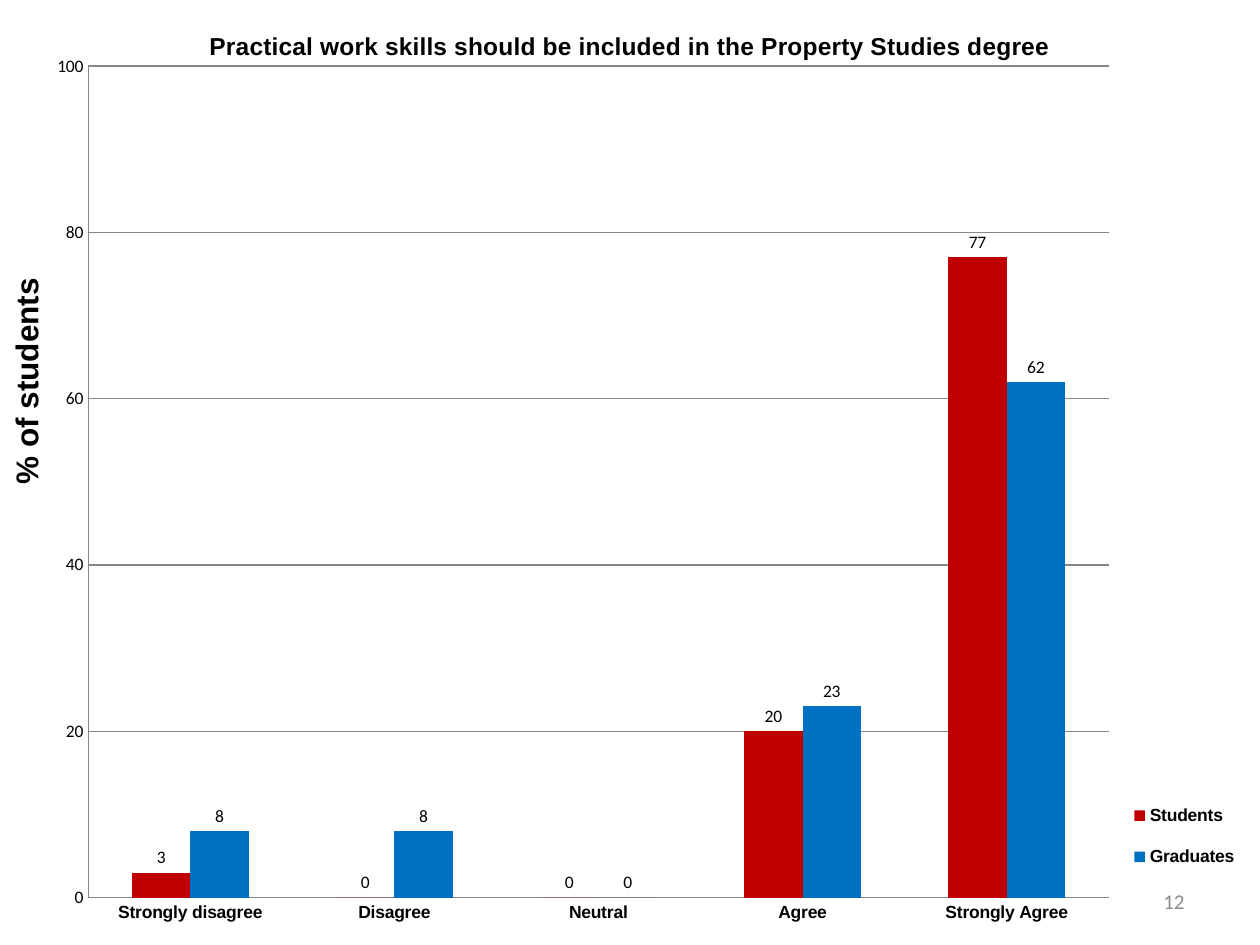
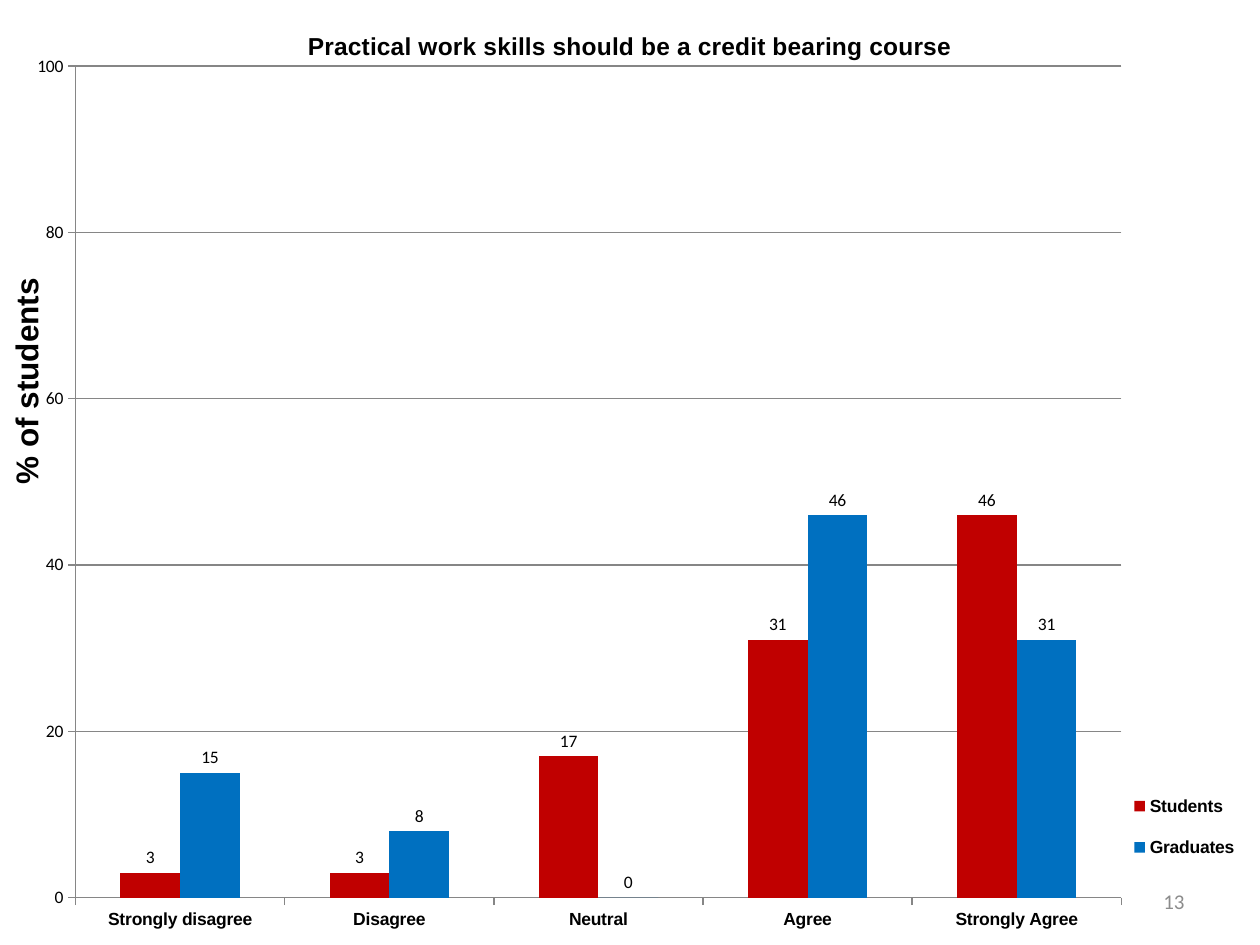
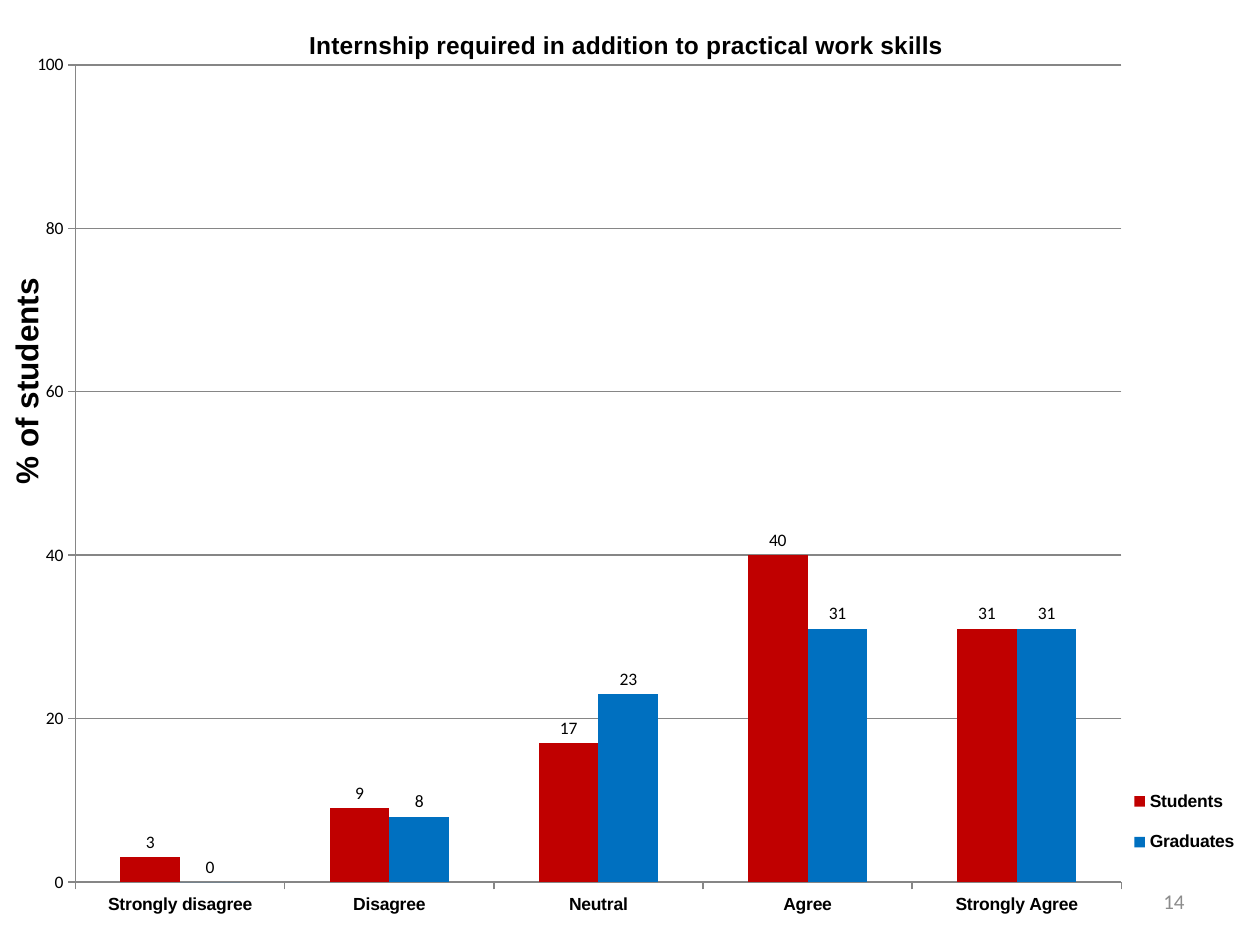
from lxml.etree import SubElement
from pptx import Presentation
from pptx.chart.data import CategoryChartData
from pptx.dml.color import RGBColor
from pptx.enum.chart import XL_CHART_TYPE, XL_LABEL_POSITION, XL_LEGEND_POSITION, XL_TICK_MARK
from pptx.enum.text import MSO_ANCHOR, MSO_AUTO_SIZE, PP_ALIGN
from pptx.oxml.ns import qn
from pptx.util import Pt

BLACK = RGBColor(0x00, 0x00, 0x00)
GREY = RGBColor(0x8C, 0x8C, 0x8C)
RULE = RGBColor(0x86, 0x86, 0x86)
RED = RGBColor(0xC0, 0x00, 0x00)
BLUE = RGBColor(0x00, 0x70, 0xC0)

BASE = {"name": "Calibri", "size": Pt(10), "bold": False}
STRONG = {"name": "Arial", "size": Pt(10), "bold": True}
HEAD = {"name": "Arial", "size": Pt(14), "bold": True}
SIDE = {"name": "Arial", "size": Pt(18), "bold": True}
FOOT = {"name": "Calibri", "size": Pt(12), "bold": False}

ANSWERS = ["Strongly disagree", "Disagree", "Neutral", "Agree", "Strongly Agree"]
GROUPS = [("Students", RED), ("Graduates", BLUE)]
WIDE = (0.06, 0.07, 0.83, 0.88)
SLIDES = [
    {"title": "Practical work skills should be included in the Property Studies degree",
     "values": [(3, 0, 0, 20, 77), (8, 8, 0, 23, 62)],
     "tick": XL_TICK_MARK.NONE, "height": 540,
     "plot": (0.07, 0.07, 0.81, 0.88), "key": (0.88, 0.83, 0.12, 0.11)},
    {"title": "Practical work skills should be a credit bearing course",
     "values": [(3, 3, 17, 31, 46), (15, 8, 0, 46, 31)],
     "tick": XL_TICK_MARK.OUTSIDE, "height": 540,
     "plot": WIDE, "key": (0.88, 0.82, 0.12, 0.11)},
    {"title": "Internship required in addition to practical work skills ",
     "values": [(3, 9, 17, 40, 31), (0, 8, 23, 31, 31)],
     "tick": XL_TICK_MARK.OUTSIDE, "height": 530.64,
     "plot": WIDE, "key": (0.88, 0.83, 0.12, 0.11)},
]
FIRST = 12


def style(font, look, color=BLACK):
    for name, value in look.items():
        setattr(font, name, value)
    font.color.rgb = color


def place(node, index, box, inner=False):
    """Fix a chart part at fractions (left, top, width, height) of the chart."""
    for old in node.findall(qn("c:layout")):
        node.remove(old)
    layout = SubElement(node, qn("c:layout"))
    node.insert(index, layout)
    manual = SubElement(layout, qn("c:manualLayout"))
    rules = [("layoutTarget", "inner")] if inner else []
    rules += [("xMode", "edge"), ("yMode", "edge"), *zip("xywh", box)]
    for tag, value in rules:
        SubElement(manual, qn(f"c:{tag}")).set("val", str(value))


prs = Presentation()
prs.slide_width, prs.slide_height = Pt(720), Pt(540)

for number, page in enumerate(SLIDES, FIRST):
    slide = prs.slides.add_slide(prs.slide_layouts[6])

    data = CategoryChartData()
    data.categories = ANSWERS
    for (group, _), values in zip(GROUPS, page["values"]):
        data.add_series(group, values)
    chart = slide.shapes.add_chart(
        XL_CHART_TYPE.COLUMN_CLUSTERED, 0, 0, Pt(720), Pt(page["height"]), data).chart
    style(chart.font, BASE)

    chart.has_title = True
    chart.chart_title.include_in_layout = False
    head = chart.chart_title.text_frame.paragraphs[0].add_run()
    head.text = page["title"]
    style(head.font, HEAD)

    chart.has_legend = True
    chart.legend.position = XL_LEGEND_POSITION.RIGHT
    chart.legend.include_in_layout = False
    style(chart.legend.font, STRONG)
    place(chart.element.xpath(".//c:legend")[0], 1, page["key"])
    place(chart.element.xpath(".//c:plotArea")[0], 0, page["plot"], inner=True)

    plot = chart.plots[0]
    plot.gap_width, plot.overlap, plot.vary_by_categories = 150, 0, False
    plot.has_data_labels = True
    labels = plot.data_labels
    labels.show_value = True
    labels.position = XL_LABEL_POSITION.OUTSIDE_END
    style(labels.font, BASE)
    for series, (_, color) in zip(plot.series, GROUPS):
        series.invert_if_negative = False
        series.format.fill.solid()
        series.format.fill.fore_color.rgb = color

    scale = chart.value_axis
    scale.minimum_scale, scale.maximum_scale, scale.major_unit = 0, 100, 20
    scale.has_major_gridlines = True
    for axis, look in ((chart.category_axis, STRONG), (scale, BASE)):
        axis.major_tick_mark = page["tick"]
        axis.minor_tick_mark = XL_TICK_MARK.NONE
        style(axis.tick_labels.font, look)
    for part in (chart.category_axis, scale, scale.major_gridlines):
        part.format.line.color.rgb = RULE
        part.format.line.width = Pt(0.75)

    side = slide.shapes.add_textbox(Pt(-57.6), Pt(197.28), Pt(144.72), Pt(28.8))
    side.rotation = 270
    side.text_frame.auto_size = MSO_AUTO_SIZE.SHAPE_TO_FIT_TEXT
    foot = slide.shapes.add_textbox(Pt(516.24), Pt(500.4), Pt(167.76), Pt(28.8))
    foot.text_frame.vertical_anchor = MSO_ANCHOR.MIDDLE
    foot.text_frame.paragraphs[0].alignment = PP_ALIGN.RIGHT
    for box, text, look, color in ((side, "% of students", SIDE, BLACK),
                                   (foot, str(number), FOOT, GREY)):
        box.text_frame.word_wrap = True
        run = box.text_frame.paragraphs[0].add_run()
        run.text = text
        style(run.font, look, color)

prs.save("out.pptx")
